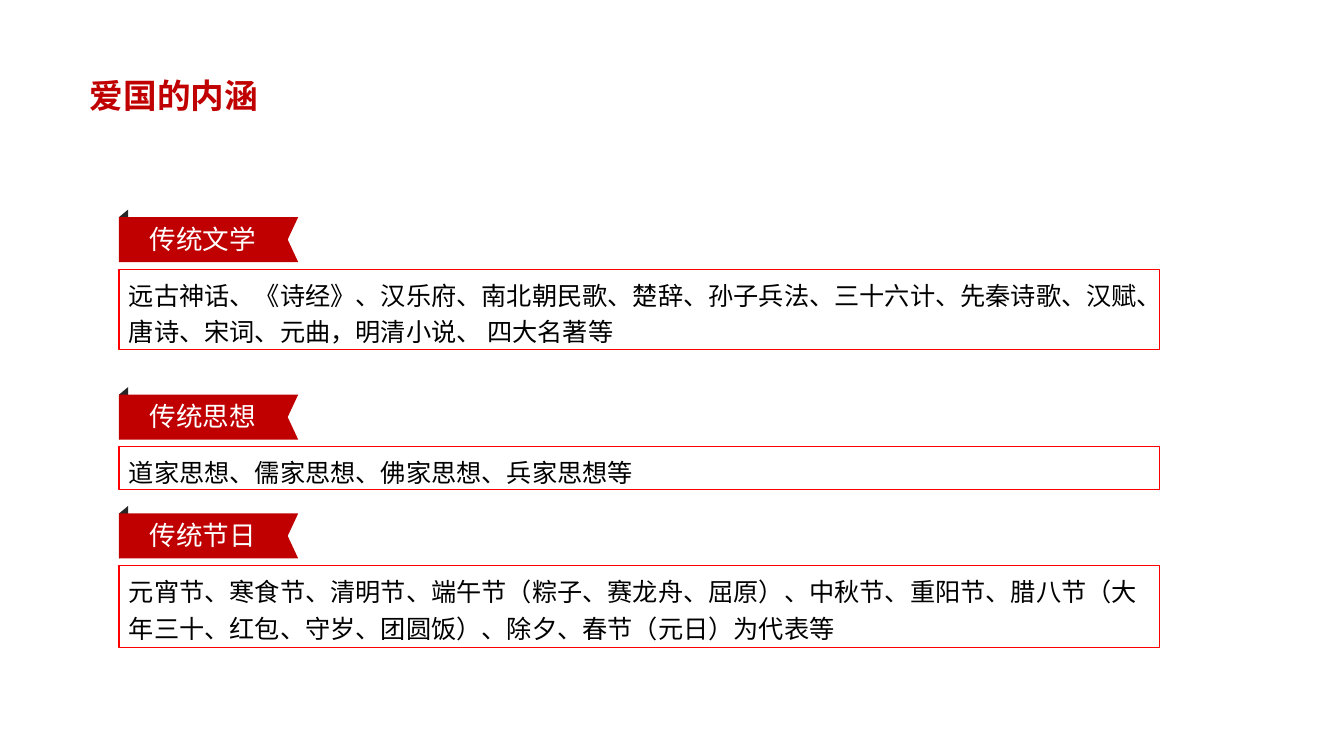
"""Build the slide on the meaning of patriotism: three ribbon-headed sections."""
from dataclasses import dataclass

from lxml.etree import SubElement
from pptx import Presentation
from pptx.dml.color import RGBColor
from pptx.enum.shapes import MSO_SHAPE as Preset
from pptx.enum.text import MSO_ANCHOR as Anchor
from pptx.enum.text import MSO_AUTO_SIZE as AutoSize
from pptx.enum.text import PP_ALIGN as Align
from pptx.oxml.ns import qn
from pptx.shapes.shapetree import SlideShapes
from pptx.text.text import TextFrame
from pptx.util import Pt

LEFT = 85
RED = "C00000"
BULLET_INDENT = 27


@dataclass(frozen=True)
class Section:
    heading: str
    content: str
    top: float
    height: float


SECTIONS = [
    Section("传统文学", "远古神话、《诗经》、汉乐府、南北朝民歌、楚辞、孙子兵法、三十六计、"
            "先秦诗歌、汉赋、唐诗、宋词、元曲，明清小说、 四大名著等", 192.2, 57.8),
    Section("传统思想", "道家思想、儒家思想、佛家思想、兵家思想等", 319, 31),
    Section("传统节日", "元宵节、寒食节、清明节、端午节（粽子、赛龙舟、屈原）、中秋节、重阳节、"
            "腊八节（大年三十、红包、守岁、团圆饭）、除夕、春节（元日）为代表等", 403.9, 58.3),
]


def rgb(code: str) -> RGBColor:
    return RGBColor.from_string(code)


def write(frame: TextFrame, text: str, size: float, color: str, align: Align,
          anchor: Anchor = Anchor.TOP, bold: bool = False) -> None:
    frame.word_wrap = True
    frame.auto_size = AutoSize.SHAPE_TO_FIT_TEXT
    frame.vertical_anchor = anchor
    frame.text = text
    paragraph = frame.paragraphs[0]
    paragraph.alignment = align
    font = paragraph.font
    font.name, font.size, font.bold = "Arial", Pt(size), bold
    font.color.rgb = rgb(color)


def draw_outline(shapes: SlideShapes, points: list[tuple[float, float]], color: str) -> None:
    corners = [(Pt(x), Pt(y)) for x, y in points]
    builder = shapes.build_freeform(*corners[0])
    builder.add_line_segments(corners[1:], close=True)
    outline = builder.convert_to_shape()
    outline.shadow.inherit = False
    outline.fill.solid()
    outline.fill.fore_color.rgb = rgb(color)
    outline.line.fill.background()


def draw_section(shapes: SlideShapes, section: Section) -> None:
    panel = shapes.add_shape(Preset.RECTANGLE, Pt(LEFT), Pt(section.top),
                             Pt(743), Pt(section.height))
    panel.shadow.inherit = False
    panel.fill.solid()
    panel.fill.fore_color.rgb = rgb("FFFFFF")
    panel.line.color.rgb = rgb("FF0000")
    panel.line.width = Pt(0.75)
    write(panel.text_frame, section.content, 18, "000000", Align.LEFT)
    panel.text_frame.paragraphs[0].line_spacing = Pt(26)

    fold_top = section.top - 42.5
    ribbon_top, ribbon_bottom = fold_top + 5.4, fold_top + 37.5
    fold_right, ribbon_right = LEFT + 6.5, LEFT + 128
    draw_outline(shapes, [(fold_right, fold_top), (LEFT, ribbon_top), (LEFT, ribbon_bottom),
                          (fold_right, ribbon_bottom - 5.4)], "262626")
    draw_outline(shapes, [(ribbon_right, ribbon_top), (LEFT, ribbon_top),
                          (LEFT, ribbon_bottom), (ribbon_right, ribbon_bottom),
                          (ribbon_right - 7.5, (ribbon_top + ribbon_bottom) / 2)], RED)

    heading = shapes.add_textbox(Pt(fold_right), Pt(section.top - 36), Pt(106.5), Pt(28.8))
    frame = heading.text_frame
    frame.margin_left = frame.margin_right = Pt(5)
    frame.margin_top = frame.margin_bottom = Pt(2.9)
    write(frame, section.heading, 19, "FFFFFF", Align.CENTER, Anchor.MIDDLE)


def draw_title(shapes: SlideShapes, text: str) -> None:
    title = shapes.title
    title.left, title.top, title.width, title.height = Pt(57), Pt(49.7), Pt(210), Pt(36)
    title.text_frame.text = text
    properties = title.text_frame.paragraphs[0]._p.get_or_add_pPr()
    properties.set("marL", str(Pt(BULLET_INDENT)))
    properties.set("indent", str(Pt(-BULLET_INDENT)))
    SubElement(properties, qn("a:buFont"), typeface="Arial")
    SubElement(properties, qn("a:buChar"), char="•")
    write(title.text_frame, text, 24, RED, Align.JUSTIFY, bold=True)


def main() -> None:
    deck = Presentation()
    deck.slide_width, deck.slide_height = Pt(960), Pt(540)
    slide = deck.slides.add_slide(deck.slide_layouts[5])
    for section in SECTIONS:
        draw_section(slide.shapes, section)
    draw_title(slide.shapes, "爱国的内涵")
    deck.save("out.pptx")


if __name__ == "__main__":
    main()
